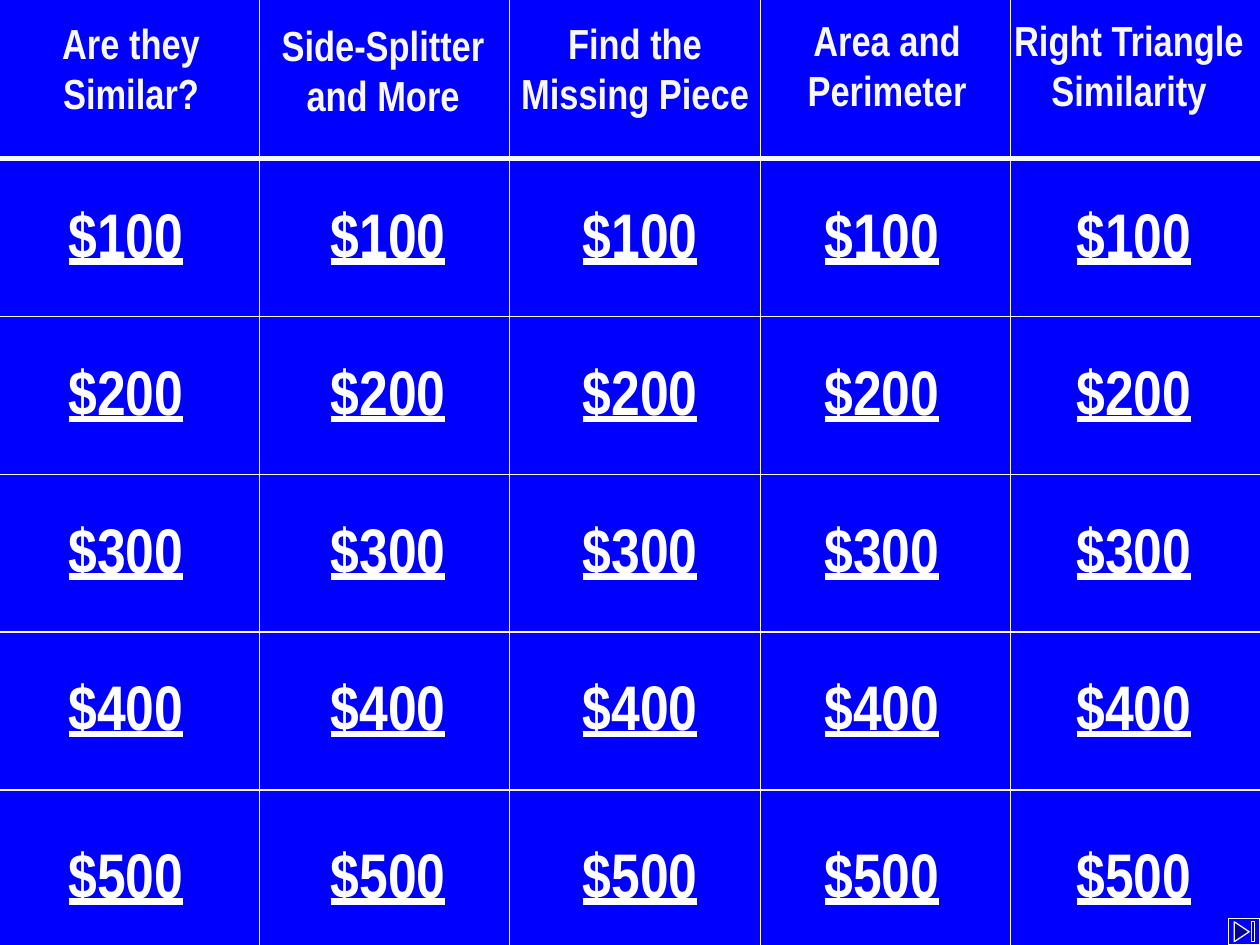
from pptx import Presentation
from pptx.dml.color import RGBColor
from pptx.enum.shapes import MSO_CONNECTOR, MSO_SHAPE
from pptx.enum.text import MSO_ANCHOR, MSO_AUTO_SIZE, PP_ALIGN
from pptx.oxml.ns import qn
from pptx.util import Pt
from lxml.etree import SubElement

WIDE, HIGH = 720, 540
FONT = "Arial Narrow"
COLOR = {"board": "0000FF", "rule": "F8F8F8", "prize": "FFFFFF"}

# Topic, left, top
TOPICS = [
    ("Are they Similar?", 0, 5.76),
    ("Side-Splitter and More", 144, 7.2),
    ("Find the Missing Piece", 288, 5.76),
    ("Area and Perimeter", 432, 4.32),
    ("Right Triangle Similarity", 570.24, 4.32),
]
# Prize, top
PRIZES = [("$100", 108), ("$200", 198), ("$300", 288), ("$400", 378), ("$500", 473.76)]
LEFTS = [0, 149.76, 293.76, 432, 576]

COL_X, COL_STEP = 148.32, 143.04
ROW_Y, ROW_STEP = 90.6, 90.2


def tint(name):
    return RGBColor.from_string(COLOR[name])


def rule(group, x1, y1, x2, y2, weight=0.75):
    line = group.shapes.add_connector(
        MSO_CONNECTOR.STRAIGHT, Pt(x1), Pt(y1), Pt(x2), Pt(y2))
    line.line.color.rgb = tint("rule")
    line.line.width = Pt(weight)
    SubElement(line._element.spPr, qn("a:effectLst"))


def label(slide, text, box, size, color, anchor=MSO_ANCHOR.TOP, under=None):
    shape = slide.shapes.add_textbox(*map(Pt, box))
    frame = shape.text_frame
    frame.word_wrap = True
    frame.auto_size = MSO_AUTO_SIZE.SHAPE_TO_FIT_TEXT
    frame.vertical_anchor = anchor
    para = frame.paragraphs[0]
    para.alignment = PP_ALIGN.CENTER
    run = para.add_run()
    run.text = text
    font = run.font
    font.name, font.size, font.bold, font.underline = FONT, Pt(size), True, under
    font.color.rgb = tint(color)


def main():
    deck = Presentation()
    deck.slide_width, deck.slide_height = Pt(WIDE), Pt(HIGH)
    slide = deck.slides.add_slide(deck.slide_layouts[6])
    slide.background.fill.solid()
    slide.background.fill.fore_color.rgb = tint("board")

    grid = slide.shapes.add_group_shape()
    for i in range(len(TOPICS) - 1):
        x = COL_X + i * COL_STEP
        rule(grid, x, 0, x, HIGH)
    for i in range(len(PRIZES)):
        y = ROW_Y + i * ROW_STEP
        rule(grid, 0, y, WIDE, y, 0.75 if i else 3)

    for text, left, top in TOPICS:
        label(slide, text, (left, top, 149.76, 65.52), 24, "rule", MSO_ANCHOR.MIDDLE)
    for text, top in PRIZES:
        for left in LEFTS:
            label(slide, text, (left, top, 144, 50.4), 36, "prize", under=True)

    end = slide.shapes.add_shape(
        MSO_SHAPE.ACTION_BUTTON_END, Pt(702), Pt(524.88), Pt(18), Pt(15.12))
    end.shadow.inherit = False
    end.fill.solid()
    end.fill.fore_color.rgb = tint("board")
    end.line.color.rgb = tint("rule")
    end.line.width = Pt(0.75)

    deck.save("out.pptx")


if __name__ == "__main__":
    main()
